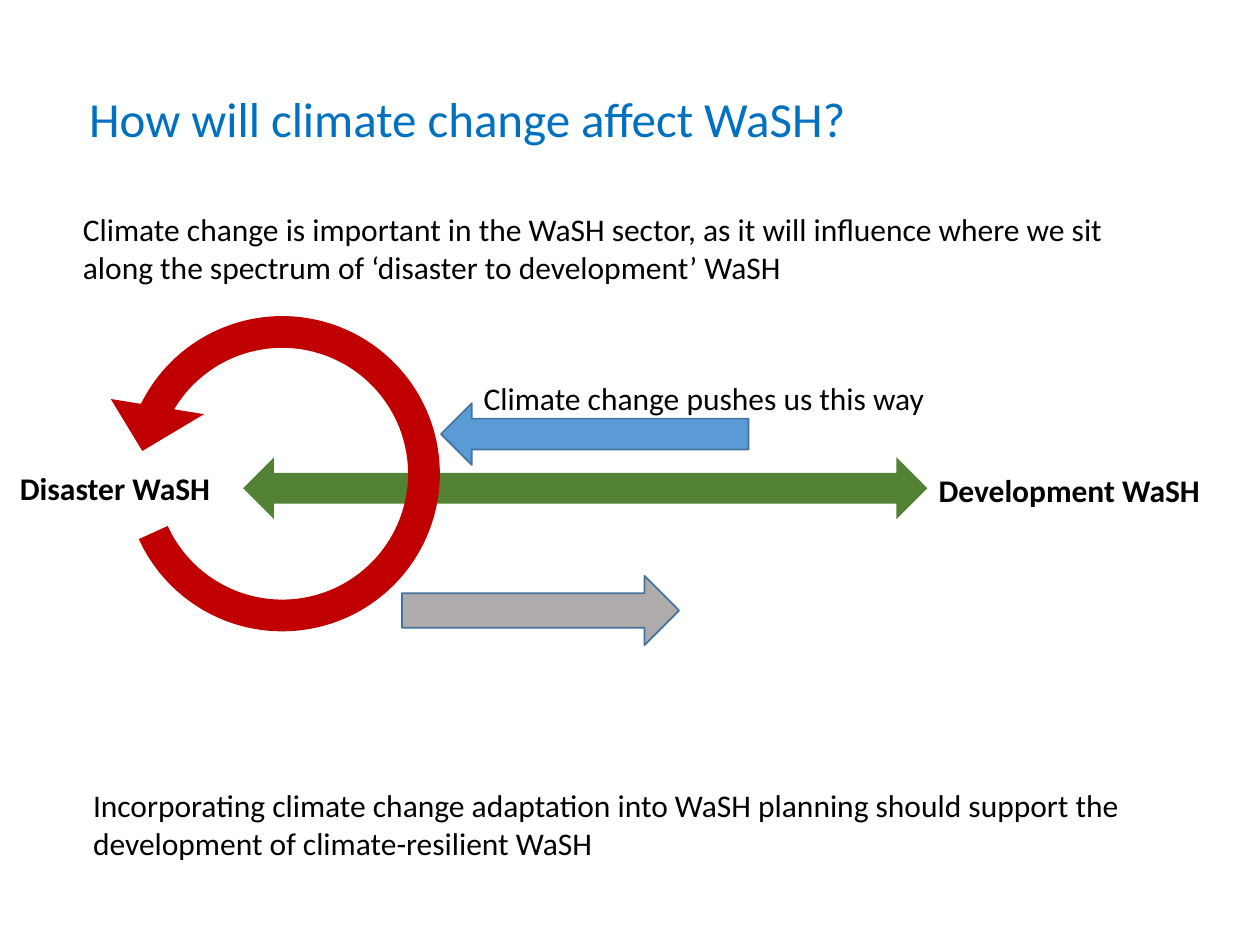
from pptx import Presentation
from pptx.dml.color import RGBColor
from pptx.enum.shapes import MSO_SHAPE
from pptx.enum.text import MSO_AUTO_SIZE
from pptx.oxml.ns import qn
from pptx.util import Inches, Pt

BOTH = MSO_SHAPE.LEFT_RIGHT_ARROW
LEFT = MSO_SHAPE.LEFT_ARROW
RIGHT = MSO_SHAPE.RIGHT_ARROW
LOOP = MSO_SHAPE.CIRCULAR_ARROW
FIT = MSO_AUTO_SIZE.SHAPE_TO_FIT_TEXT

BLACK, BLUE, RED = "000000", "0070C0", "C00000"
GREEN, SKY, GREY, EDGE = "548235", "5B9BD5", "AFABAB", "43739E"


def color(code):
    return RGBColor.from_string(code)


class Page:
    font = "Calibri"

    def __init__(self, slide):
        self.slide = slide

    def text(self, box, words, size=18, ink=BLACK, bold=False, wrap=False):
        frame = self.slide.shapes.add_textbox(*map(Inches, box)).text_frame
        frame.word_wrap = wrap
        frame.auto_size = FIT
        run = frame.paragraphs[0].add_run()
        run.text = words
        style = {"name": self.font, "size": Pt(size), "bold": bold}
        for key, value in style.items():
            setattr(run.font, key, value)
        run.font.color.rgb = color(ink)

    def arrow(self, kind, box, fill, edge=None):
        shape = self.slide.shapes.add_shape(kind, *map(Inches, box))
        shape.shadow.inherit = False
        shape.fill.solid()
        shape.fill.fore_color.rgb = color(fill)
        if edge:
            shape.line.color.rgb = color(edge)
            shape.line.width = Pt(1)
        else:
            shape.line.fill.background()
        return shape

    def loop(self, box, fill, turn, band, head, angles):
        """Mirrored circular arrow; band and head in percent, angles in degrees."""
        shape = self.arrow(LOOP, box, fill)
        shape.rotation = turn
        shape.element.spPr.find(qn("a:xfrm")).set("flipH", "1")
        # Angles are stored in 60000ths of a degree, adjustments in 100000ths
        values = [band / 100, *(angle * 0.6 for angle in angles), head / 100]
        for i, value in enumerate(values):
            shape.adjustments[i] = value


def main():
    deck = Presentation()
    deck.slide_width, deck.slide_height = Inches(10), Inches(7.5)
    page = Page(deck.slides.add_slide(deck.slide_layouts[6]))

    # Spectrum from disaster to development
    page.text((7.35, 3.69, 2.29, 0.4), "Development WaSH", bold=True)
    page.text((0.06, 3.67, 1.73, 0.4), "Disaster WaSH", bold=True)
    page.arrow(BOTH, (1.93, 3.63, 5.43, 0.49), GREEN)
    page.loop((0.74, 2.26, 3, 3), RED, turn=8.4, band=8.4, head=12.5,
              angles=(19.04, 340.12, 32.92))

    # Introduction
    page.text((0.56, 1.62, 8.9, 0.71),
              "Climate change is important in the WaSH sector, as it will influence "
              "where we sit along the spectrum of ‘disaster to development’ WaSH",
              wrap=True)

    # Push towards disaster
    page.arrow(LEFT, (3.5, 3.2, 2.44, 0.49), SKY, EDGE)
    page.text((3.74, 2.96, 3.92, 0.4), "Climate change pushes us this way")

    # Title and conclusion
    page.text((0.61, 0.65, 6.66, 0.57), "How will climate change affect WaSH?",
              size=28, ink=BLUE)
    page.text((0.64, 6.19, 8.9, 0.71),
              "Incorporating climate change adaptation into WaSH planning should "
              "support the development of climate-resilient WaSH",
              wrap=True)

    # Push back towards development
    page.arrow(RIGHT, (3.19, 4.57, 2.2, 0.55), GREY, EDGE)

    deck.save("out.pptx")


if __name__ == "__main__":
    main()
